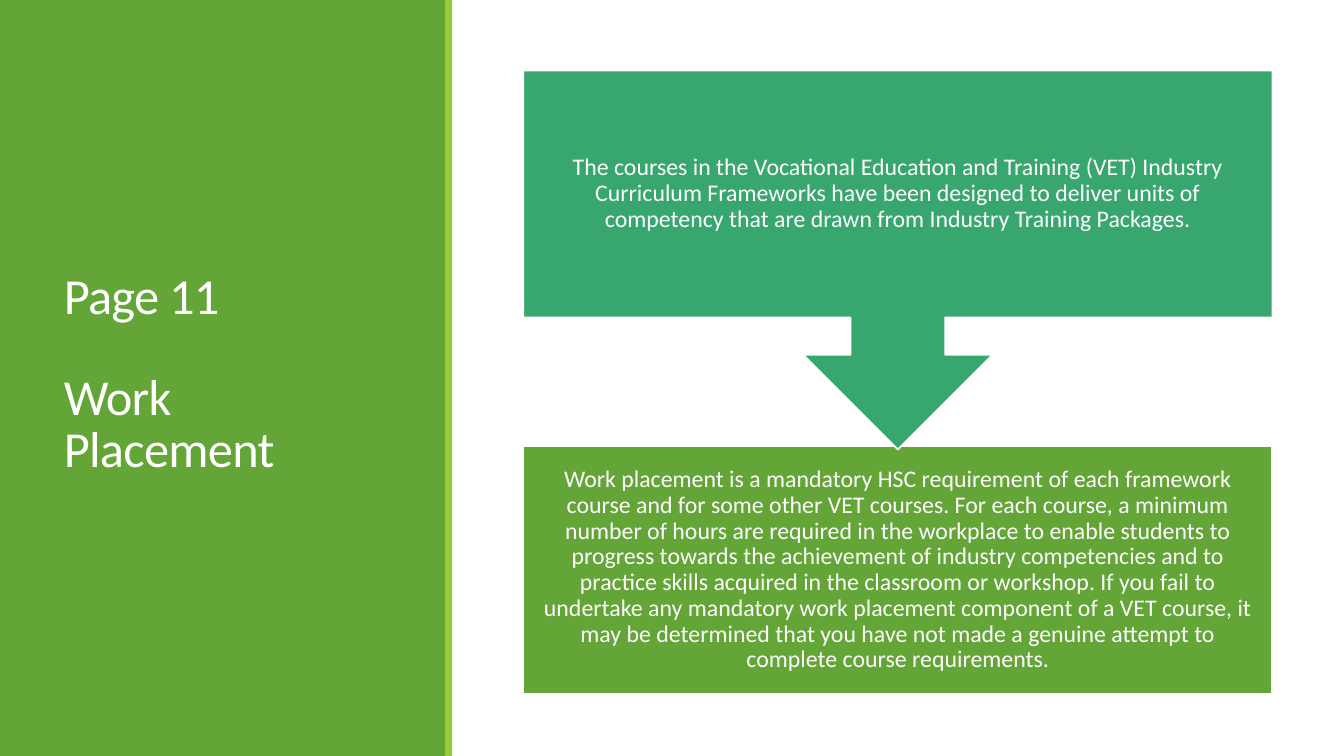
from pptx import Presentation, util as u
from pptx.dml import color
from pptx.enum import shapes, text

COLORS = {"panel": "63A537", "stripe": "99CB38", "callout": "37A76F", "white": "FFFFFF"}
FRAMEWORKS = (
    "The courses in the Vocational Education and Training (VET) Industry "
    "Curriculum Frameworks have been designed to deliver units of "
    "competency that are drawn from Industry Training Packages."
)
PLACEMENT = (
    "Work placement is a mandatory HSC requirement of each framework "
    "course and for some other VET courses. For each course, a minimum "
    "number of hours are required in the workplace to enable students to "
    "progress towards the achievement of industry competencies and to "
    "practice skills acquired in the classroom or workshop. If you fail to "
    "undertake any mandatory work placement component of a VET course, it "
    "may be determined that you have not made a genuine attempt to "
    "complete course requirements."
)

prs = Presentation()
prs.slide_width, prs.slide_height = u.Inches(13.33), u.Inches(7.5)
W, H = prs.slide_width, prs.slide_height
s = prs.slides.add_slide(prs.slide_layouts[5])
title = s.shapes.title


def add_block(kind, fill, left, top, width, height):
    sp = s.shapes.add_shape(kind, left, top, width, height)
    sp.shadow.inherit = False
    sp.fill.solid()
    sp.fill.fore_color.rgb = color.RGBColor.from_string(COLORS[fill])
    sp.line.fill.background()
    return sp


def add_text(p, words, size, spacing):
    r = p.add_run()
    r.text = words
    for name, value in {"name": "Calibri", "size": u.Pt(size), "bold": False}.items():
        setattr(r.font, name, value)
    r.font.color.rgb = color.RGBColor.from_string(COLORS["white"])
    p.line_spacing = spacing
    return r


RECT = shapes.MSO_SHAPE.RECTANGLE
CALLOUT = shapes.MSO_SHAPE.DOWN_ARROW_CALLOUT
panel_w = int(0.332 * W)
panel = add_block(RECT, "panel", 0, 0, panel_w, H)
panel._element.addnext(title._element)
add_block(RECT, "stripe", panel_w - u.Inches(0.01), 0, u.Inches(0.07), H)

frame = {"left": 0.04 * W, "top": 0.076 * H, "width": 0.253 * W, "height": 0.841 * H}
for name, value in frame.items():
    setattr(title, name, int(value))
tf = title.text_frame
for name, value in {"word_wrap": True, "auto_size": text.MSO_AUTO_SIZE.NONE,
                    "vertical_anchor": text.MSO_ANCHOR.MIDDLE}.items():
    setattr(tf, name, value)
for i, words in enumerate(["Page 11", "Work Placement"]):
    p = tf.paragraphs[0] if i == 0 else tf.add_paragraph()
    p.alignment = text.PP_ALIGN.LEFT
    p.space_before = u.Pt(36 * i)
    add_text(p, words, 36, 0.85).font._element.set("spc", "-50")

left, width = u.Inches(5.19), u.Inches(7.43)
box_h, callout_h = u.Inches(2.45), u.Inches(3.76)
steps = [
    (RECT, "panel", u.Inches(4.43), box_h, PLACEMENT),
    (CALLOUT, "callout", u.Inches(0.7), callout_h, FRAMEWORKS),
]
for kind, fill, top, height, words in steps:
    sp = add_block(kind, fill, left, top, width, height)
    sp.line.color.rgb = color.RGBColor.from_string(COLORS["white"])
    sp.line.width = u.Pt(1.25)
    if kind == CALLOUT:
        for i, share in enumerate([0.25, 0.25, 0.25, box_h / callout_h]):
            sp.adjustments[i] = share
    tf = sp.text_frame
    for side in ("left", "top", "right", "bottom"):
        setattr(tf, f"margin_{side}", u.Inches(0.13))
    tf.word_wrap = True
    tf.vertical_anchor = text.MSO_ANCHOR.MIDDLE
    p = tf.paragraphs[0]
    p.alignment = text.PP_ALIGN.CENTER
    add_text(p, words, 17, 0.9)

prs.save("out.pptx")
